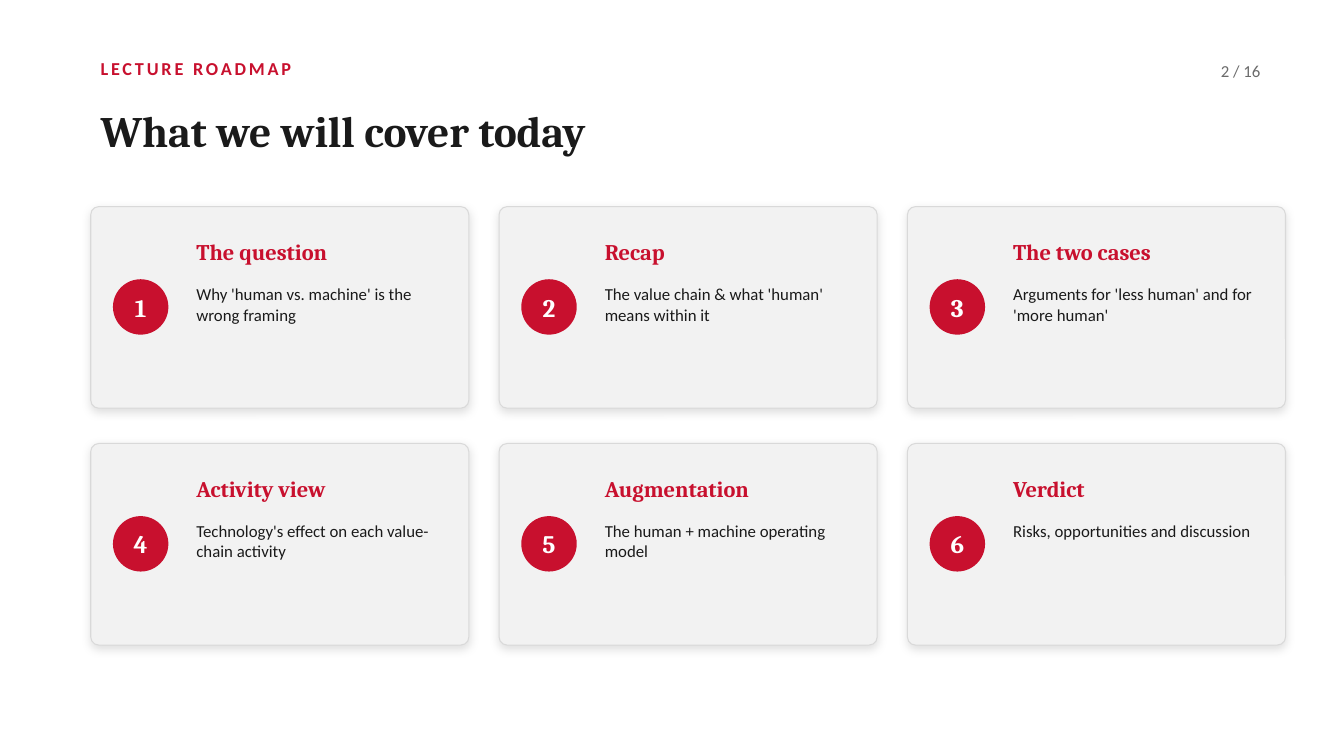
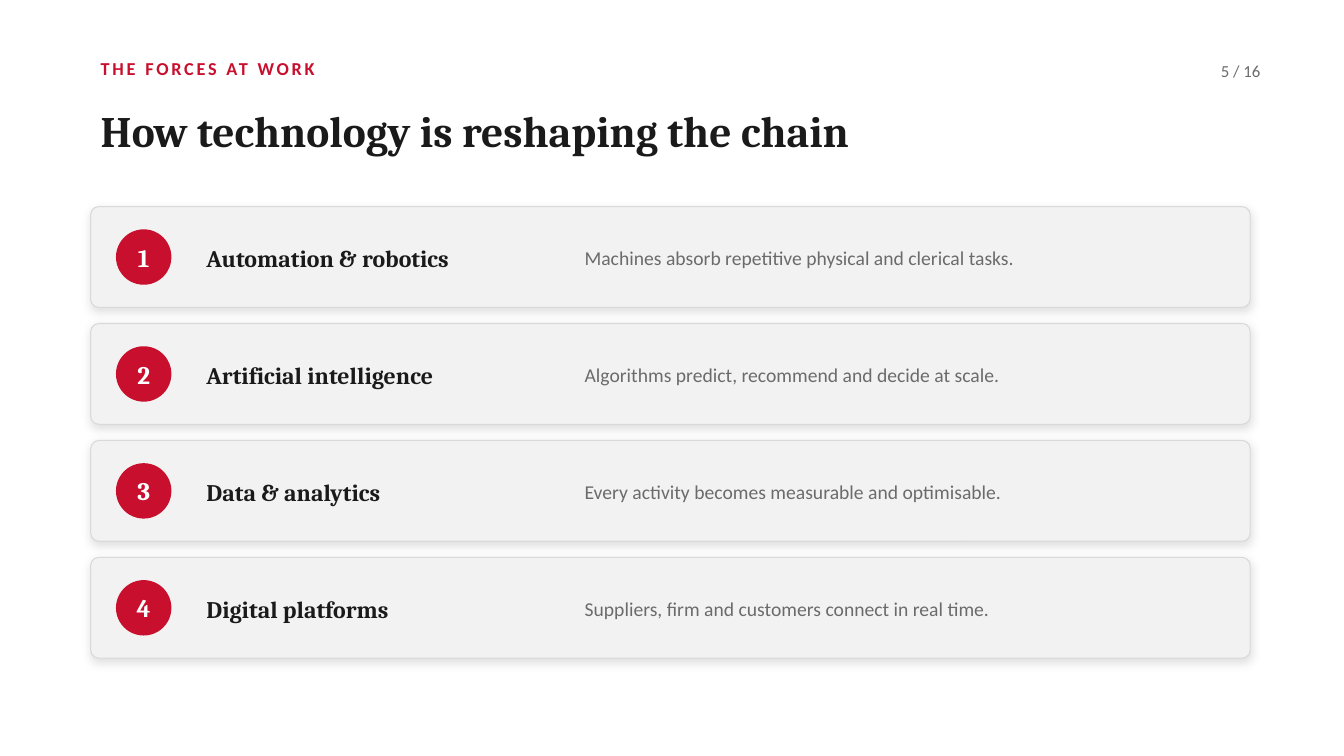
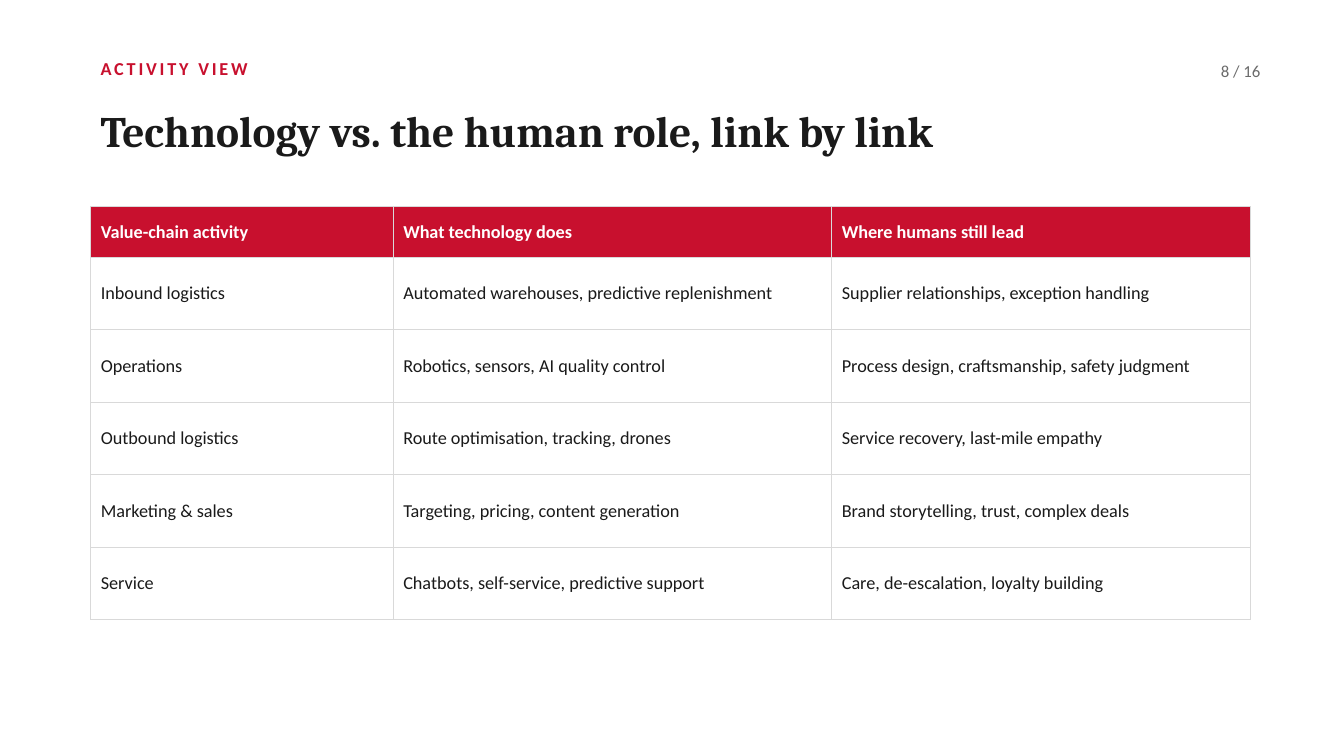
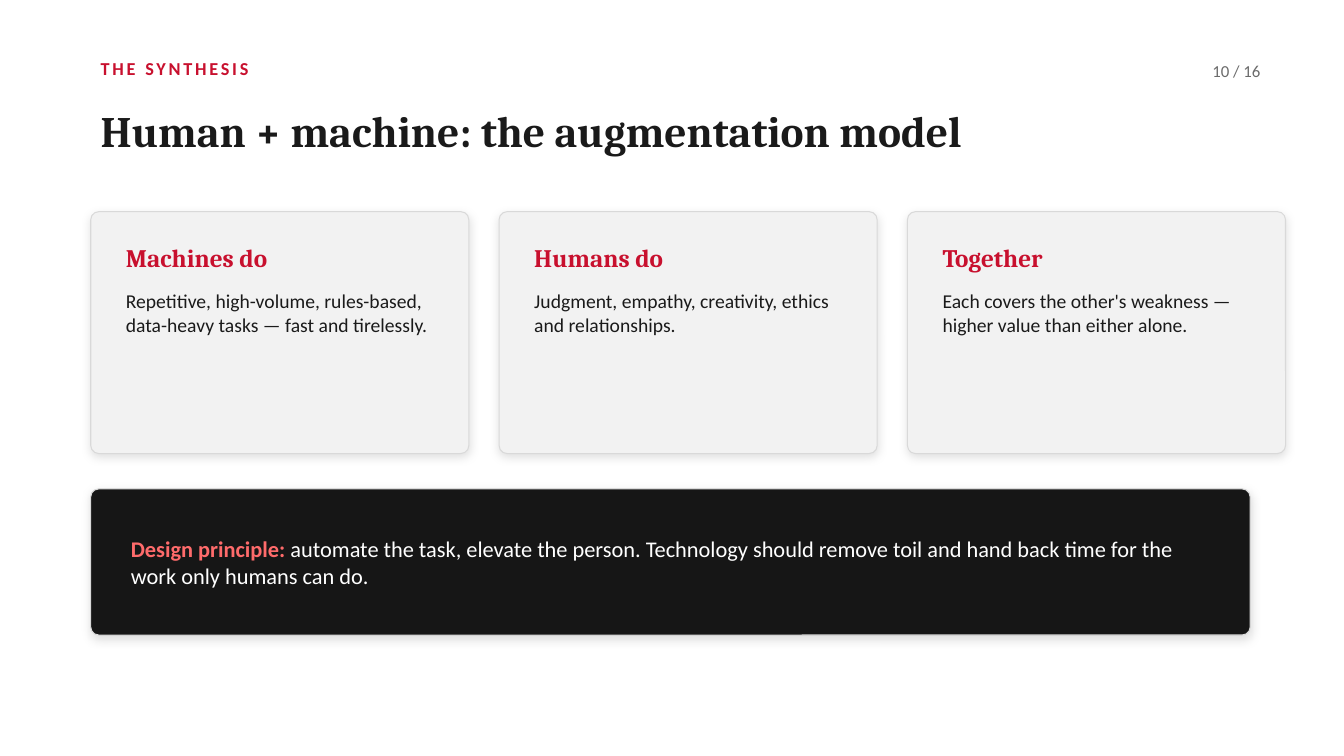
from lxml.etree import SubElement
from pptx import Presentation
from pptx.dml.color import RGBColor
from pptx.enum.shapes import MSO_SHAPE as Shape
from pptx.enum.text import MSO_ANCHOR as Anchor, PP_ALIGN as Align
from pptx.oxml import parse_xml
from pptx.oxml.ns import nsdecls, qn
from pptx.util import Inches, Pt

RED, INK, GREY, WHITE = "C8102E", "1A1A1A", "6B6B6B", "FFFFFF"
PANEL, EDGE, DARK, CORAL = "F2F2F2", "D9D9D9", "161616", "FF6B6B"
HEAD, BODY = "Cambria", "Calibri"
LEFT, TOP, FULL = 0.9, 2.05, 11.5
COL, GAP = 3.75, 0.3
DOT = 0.55
RADIUS = 0.08
PAGES = 16


def rgb(code):
    return RGBColor.from_string(code)


def col(i):
    """Left edge of column i of the three-column grid."""
    return LEFT + i * (COL + GAP)


def style(font, size, color, name=BODY, bold=False):
    font.size, font.name, font.bold = Pt(size), name, bold
    font.color.rgb = rgb(color)


def text(slide, box, words, *look, anchor=Anchor.MIDDLE, align=Align.LEFT):
    """Add a wrapped text box and return its paragraph."""
    frame = slide.shapes.add_textbox(*map(Inches, box)).text_frame
    frame.word_wrap = True
    frame.vertical_anchor = anchor
    para = frame.paragraphs[0]
    para.text = words
    para.alignment = align
    if look:
        style(para.font, *look)
    return para


def fill(shape, color):
    shape.fill.solid()
    shape.fill.fore_color.rgb = rgb(color)
    shape.shadow.inherit = False


def card(slide, x, y, w, h, color=PANEL):
    """Add a rounded panel with a soft shadow below it."""
    shape = slide.shapes.add_shape(
        Shape.ROUNDED_RECTANGLE, *map(Inches, (x, y, w, h)))
    shape.adjustments[0] = RADIUS / min(w, h)
    shape.line.color.rgb = rgb(EDGE)
    shape.line.width = Pt(0.75)
    fill(shape, color)
    effects = shape._element.spPr.find(qn("a:effectLst"))
    effects.append(parse_xml(
        f'<a:outerShdw {nsdecls("a")} blurRad="{Pt(7)}" dist="{Pt(2)}" '
        'dir="5400000" algn="bl" rotWithShape="0"><a:srgbClr val="000000">'
        '<a:alpha val="12000"/></a:srgbClr></a:outerShdw>'))


def badge(slide, x, y, num):
    dot = slide.shapes.add_shape(Shape.OVAL, *map(Inches, (x, y, DOT, DOT)))
    fill(dot, RED)
    dot.line.fill.background()
    frame = dot.text_frame
    frame.margin_left = frame.margin_right = 0
    frame.margin_top = frame.margin_bottom = 0
    frame.vertical_anchor = Anchor.MIDDLE
    para = frame.paragraphs[0]
    para.text = str(num)
    para.alignment = Align.CENTER
    style(para.font, 18, WHITE, HEAD, True)


def start(deck, page, label, title):
    """Add a slide with its label, title and page number."""
    slide = deck.slides.add_slide(deck.slide_layouts[6])
    para = text(slide, (LEFT, 0.48, 9, 0.4), label, 13, RED, BODY, True)
    para.runs[0]._r.get_or_add_rPr().set("spc", "200")
    text(slide, (LEFT, 0.82, FULL, 0.95), title, 31, INK, HEAD, True)
    text(slide, (11.6, 0.5, 1, 0.4), f"{page} / {PAGES}", 12, GREY,
         align=Align.RIGHT)
    return slide


def topic(slide, x, y, w, h, name, note, sizes):
    """Add a red heading with a note below it."""
    text(slide, (x, y, w, 0.5), name, sizes[0], RED, HEAD, True)
    text(slide, (x, y + 0.52, w, h), note, sizes[1], INK, anchor=Anchor.TOP)


def roadmap(slide, items):
    for i, (name, note) in enumerate(items):
        x, y = col(i % 3), TOP + i // 3 * 2.35
        card(slide, x, y, COL, 2)
        badge(slide, x + 0.22, y + 0.72, i + 1)
        topic(slide, x + 0.95, y + 0.2, 2.6, 1.1, name, note, (16, 12))


def forces(slide, items):
    for i, (name, note) in enumerate(items):
        y = TOP + i * 1.16
        card(slide, LEFT, y, FULL, 1)
        badge(slide, LEFT + 0.25, y + (1 - DOT) / 2, i + 1)
        text(slide, (1.95, y + 0.12, 3.6, 0.78), name, 17, INK, HEAD, True)
        text(slide, (5.7, y + 0.12, 6.5, 0.78), note, 14, GREY)


def border(cell):
    props = cell._tc.get_or_add_tcPr()
    for i, side in enumerate(("lnL", "lnR", "lnT", "lnB")):
        line = parse_xml(f'<a:{side} {nsdecls("a")} w="{Pt(0.75)}"/>')
        paint = SubElement(line, qn("a:solidFill"))
        SubElement(paint, qn("a:srgbClr"), val=EDGE)
        props.insert(i, line)


def grid(slide, rows, widths, heights):
    table = slide.shapes.add_table(
        len(rows), len(widths),
        *map(Inches, (LEFT, TOP, FULL, sum(heights)))).table
    table.horz_banding = False
    for column, width in zip(table.columns, widths):
        column.width = Inches(width)
    for r, (row, height) in enumerate(zip(rows, heights)):
        table.rows[r].height = Inches(height)
        for c, words in enumerate(row):
            cell = table.cell(r, c)
            cell.text = words
            cell.vertical_anchor = Anchor.MIDDLE
            cell.fill.solid()
            cell.fill.fore_color.rgb = rgb(WHITE if r else RED)
            style(cell.text_frame.paragraphs[0].font, 13,
                  INK if r else WHITE, BODY, not r)
            border(cell)


def model(slide, items, lead, rule):
    for i, (name, note) in enumerate(items):
        card(slide, col(i), 2.1, COL, 2.4)
        topic(slide, col(i) + 0.25, 2.3, 3.25, 1.5, name, note, (18, 14))
    card(slide, LEFT, 4.85, FULL, 1.45, DARK)
    para = text(slide, (1.2, 5.05, 11, 1.05), "")
    for words, color, bold in ((lead, CORAL, True), (rule, WHITE, False)):
        run = para.add_run()
        run.text = words
        style(run.font, 16, color, BODY, bold)


def main():
    deck = Presentation()
    deck.slide_width, deck.slide_height = Inches(13.33), Inches(7.5)

    roadmap(start(deck, 2, "LECTURE ROADMAP", "What we will cover today"), [
        ("The question", "Why 'human vs. machine' is the wrong framing"),
        ("Recap", "The value chain & what 'human' means within it"),
        ("The two cases", "Arguments for 'less human' and for 'more human'"),
        ("Activity view", "Technology's effect on each value-chain activity"),
        ("Augmentation", "The human + machine operating model"),
        ("Verdict", "Risks, opportunities and discussion"),
    ])

    forces(start(deck, 5, "THE FORCES AT WORK",
                 "How technology is reshaping the chain"), [
        ("Automation & robotics",
         "Machines absorb repetitive physical and clerical tasks."),
        ("Artificial intelligence",
         "Algorithms predict, recommend and decide at scale."),
        ("Data & analytics",
         "Every activity becomes measurable and optimisable."),
        ("Digital platforms",
         "Suppliers, firm and customers connect in real time."),
    ])

    grid(start(deck, 8, "ACTIVITY VIEW",
               "Technology vs. the human role, link by link"), [
        ("Value-chain activity", "What technology does",
         "Where humans still lead"),
        ("Inbound logistics", "Automated warehouses, predictive replenishment",
         "Supplier relationships, exception handling"),
        ("Operations", "Robotics, sensors, AI quality control",
         "Process design, craftsmanship, safety judgment"),
        ("Outbound logistics", "Route optimisation, tracking, drones",
         "Service recovery, last-mile empathy"),
        ("Marketing & sales", "Targeting, pricing, content generation",
         "Brand storytelling, trust, complex deals"),
        ("Service", "Chatbots, self-service, predictive support",
         "Care, de-escalation, loyalty building"),
    ], (3, 4.35, 4.15), [0.5] + [0.72] * 5)

    model(start(deck, 10, "THE SYNTHESIS",
                "Human + machine: the augmentation model"), [
        ("Machines do", "Repetitive, high-volume, rules-based, "
         "data-heavy tasks — fast and tirelessly."),
        ("Humans do",
         "Judgment, empathy, creativity, ethics and relationships."),
        ("Together", "Each covers the other's weakness — "
         "higher value than either alone."),
    ], "Design principle: ", "automate the task, elevate the person. "
        "Technology should remove toil and hand back time for the "
        "work only humans can do.")

    deck.save("out.pptx")


if __name__ == "__main__":
    main()
